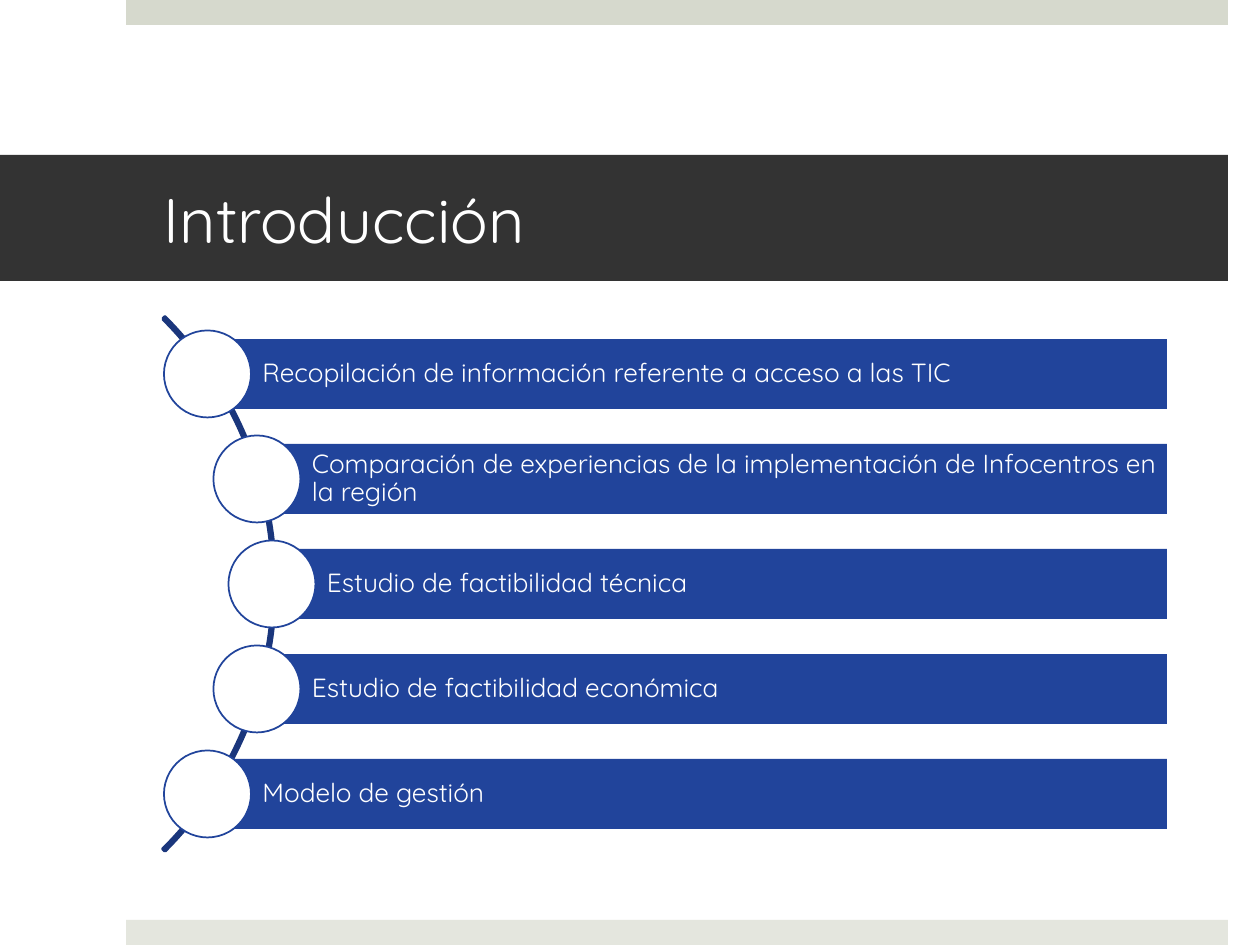
import math

from pptx import Presentation
from pptx.dml.color import RGBColor
from pptx.enum import shapes, text
from pptx.util import Pt

TITLE = "Introducción"
TOPICS = [
    "Recopilación de información referente a acceso a las TIC",
    "Comparación de experiencias de la implementación de Infocentros en la región",
    "Estudio de factibilidad técnica",
    "Estudio de factibilidad económica",
    "Modelo de gestión",
]

WHITE = RGBColor(0xFF, 0xFF, 0xFF)
CHARCOAL = RGBColor(0x33, 0x33, 0x33)
SAGE = RGBColor(0xD6, 0xD9, 0xCD)
PALE_SAGE = RGBColor(0xE4, 0xE6, 0xDE)
BLUE = RGBColor(0x21, 0x44, 0x9B)
NAVY = RGBColor(0x1A, 0x36, 0x7C)

FONT = "Quicksand"
PX = 914400 / 126
KIND = shapes.MSO_SHAPE

STRIPS = [(0, SAGE), (920, PALE_SAGE)]
ARC_SIZE = 755
ARC_CENTER_X, ARC_CENTER_Y = -102, 584
ARC_ANGLES = (315, 45)
ARC_THICKNESS = 0.0036
NODE_RADIUS = 374
NODE_SIZE = 87
BAR_RIGHT, BAR_HEIGHT, BAR_PITCH = 1167, 70, 105


def px(length):
    return round(length * PX)


def add_block(slide, kind, left, top, width, height, fill=None, line=None, line_pt=1):
    block = slide.shapes.add_shape(kind, px(left), px(top), px(width), px(height))
    block.shadow.inherit = False
    if fill is None:
        block.fill.background()
    else:
        block.fill.solid()
        block.fill.fore_color.rgb = fill
    if line is None:
        block.line.fill.background()
    else:
        block.line.color.rgb = line
        block.line.width = Pt(line_pt)
    return block


def write(block, words, size, insets, spacing):
    frame = block.text_frame
    left, top, right, bottom = map(px, insets)
    frame_format = {
        "word_wrap": True,
        "vertical_anchor": text.MSO_ANCHOR.MIDDLE,
        "margin_left": left,
        "margin_top": top,
        "margin_right": right,
        "margin_bottom": bottom,
    }
    for name, value in frame_format.items():
        setattr(frame, name, value)
    paragraph = frame.paragraphs[0]
    paragraph.alignment = text.PP_ALIGN.LEFT
    paragraph.line_spacing = spacing
    run = paragraph.add_run()
    run.text = words
    for name, value in {"name": FONT, "size": Pt(size)}.items():
        setattr(run.font, name, value)
    run.font.color.rgb = WHITE


def main():
    deck = Presentation()
    deck.slide_width, deck.slide_height = px(1260), px(945)
    slide = deck.slides.add_slide(deck.slide_layouts[6])

    for top, color in STRIPS:
        add_block(slide, KIND.RECTANGLE, 126, top, 1102, 25, color)

    banner = add_block(slide, KIND.RECTANGLE, 0, 155, 1228, 126, CHARCOAL)
    write(banner, TITLE, 36, (164, 6, 38, 6), 1.0)

    arc = add_block(
        slide, KIND.BLOCK_ARC,
        ARC_CENTER_X - ARC_SIZE / 2, ARC_CENTER_Y - ARC_SIZE / 2,
        ARC_SIZE, ARC_SIZE, line=NAVY, line_pt=2,
    )
    start, end = ARC_ANGLES
    arc.adjustments[0] = start * 0.6
    arc.adjustments[1] = end * 0.6
    arc.adjustments[2] = ARC_THICKNESS

    for index, topic in enumerate(TOPICS):
        offset = (index - (len(TOPICS) - 1) / 2) * BAR_PITCH
        node_x = ARC_CENTER_X + math.sqrt(NODE_RADIUS ** 2 - offset ** 2)
        node_y = ARC_CENTER_Y + offset
        bar = add_block(
            slide, KIND.RECTANGLE, node_x, node_y - BAR_HEIGHT / 2,
            BAR_RIGHT - node_x, BAR_HEIGHT, BLUE,
        )
        write(bar, topic, 15, (55, 5, 5, 5), 0.9)
        add_block(
            slide, KIND.OVAL, node_x - NODE_SIZE / 2, node_y - NODE_SIZE / 2,
            NODE_SIZE, NODE_SIZE, WHITE, BLUE,
        )

    deck.save("out.pptx")


if __name__ == "__main__":
    main()
